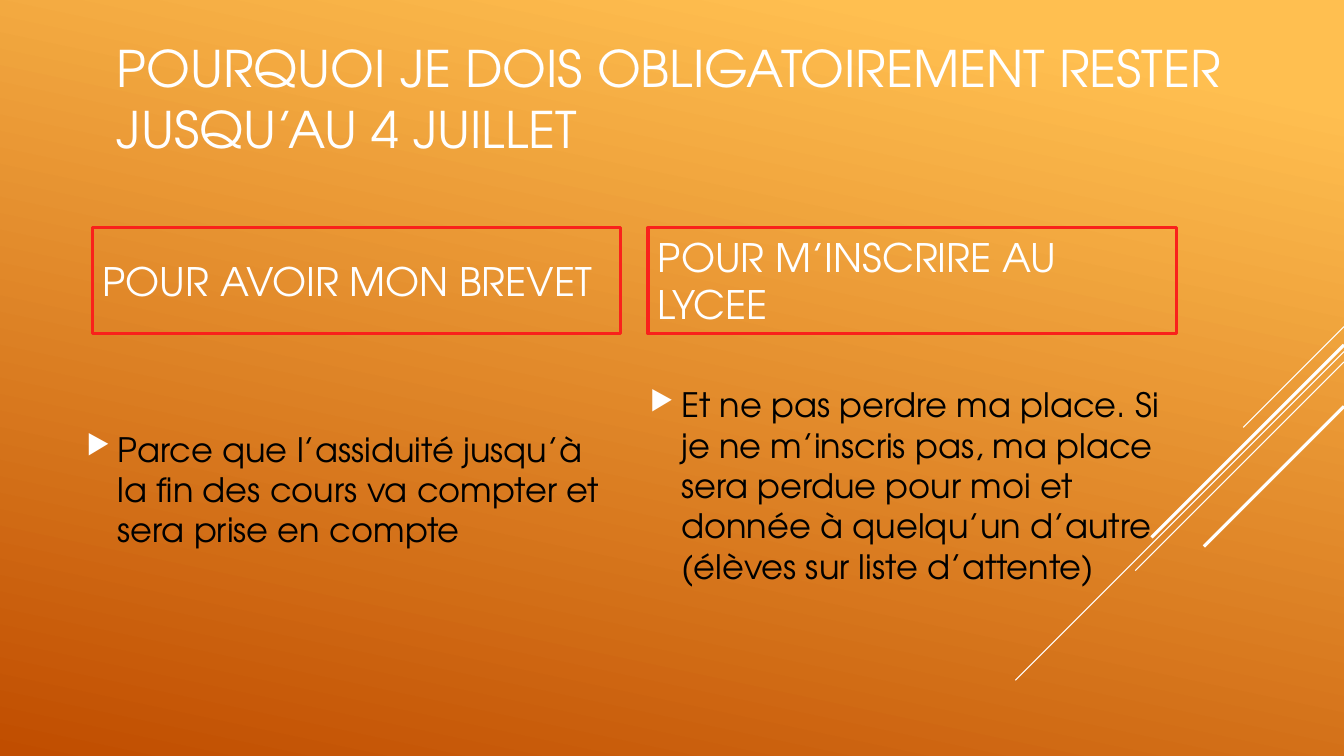
from lxml import etree
from pptx import Presentation
from pptx.dml.color import RGBColor
from pptx.enum.shapes import MSO_CONNECTOR, MSO_SHAPE
from pptx.enum.text import MSO_ANCHOR, MSO_AUTO_SIZE, PP_ALIGN
from pptx.oxml.ns import qn
from pptx.util import Cm, Pt

STRAIGHT = MSO_CONNECTOR.STRAIGHT
RECT = MSO_SHAPE.RECTANGLE
MIDDLE = MSO_ANCHOR.MIDDLE
NO_FIT = MSO_AUTO_SIZE.NONE
LEFT = PP_ALIGN.LEFT

WIDTH, HEIGHT = 33.87, 19.05
FONT = "TeX Gyre Adventor"
COLORS = {"light": "FFBF50", "dark": "C04D00", "white": "FFFFFF",
          "black": "000000", "red": "F9211B"}

TITLE = "POURQUOI JE DOIS OBLIGATOIREMENT RESTER JUSQU’AU 4 JUILLET"
RAYS = [(8.23, 2.54, 0.75), (8.86, 8.28, 0.75), (9.12, 5.26, 0.75),
        (8.69, 4.85, 2.25), (10.24, 3.53, 2.25)]
HEADS = [(2.34, "POUR AVOIR MON BREVET"),
         (16.33, "POUR M’INSCRIRE AU LYCEE")]
BODIES = [
    ((1.93, 7.8, 13.72, 9.04),
     "Parce que l’assiduité jusqu’à la fin des cours va compter "
     "et sera prise en compte"),
    ((16.13, 8.81, 13.72, 6.83),
     "Et ne pas perdre ma place. Si je ne m’inscris pas, ma place sera "
     "perdue pour moi et donnée à quelqu’un d’autre "
     "(élèves sur liste d’attente)"),
]


class Deck:
    """Hold the style and the current slide, and draw each kind of element."""

    def __init__(self):
        self.file = Presentation()
        self.file.slide_width, self.file.slide_height = Cm(WIDTH), Cm(HEIGHT)
        self.slide = self.file.slides.add_slide(self.file.slide_layouts[5])
        self.shapes = self.slide.shapes

    def color(self, name):
        return RGBColor.from_string(COLORS[name])

    def back(self):
        fill = self.slide.background.fill
        fill.gradient()
        fill.gradient_angle = 258
        stops = zip(fill.gradient_stops, [(0.1, "light"), (1, "dark")])
        for stop, (place, name) in stops:
            stop.position = place
            stop.color.rgb = self.color(name)

    def label(self, shape, text, size, name):
        frame = shape.text_frame
        frame.text = text
        frame.word_wrap = True
        frame.auto_size = NO_FIT
        frame.vertical_anchor = MIDDLE
        para = frame.paragraphs[0]
        para.alignment = LEFT
        para.font.name = FONT
        para.font.size = Pt(size)
        para.font.color.rgb = self.color(name)
        return para

    def title(self, text, box):
        shape = self.shapes.title
        shape.left, shape.top, shape.width, shape.height = map(Cm, box)
        self.label(shape, text, 36, "white")

    def ray(self, top, span, weight):
        line = self.shapes.add_connector(
            STRAIGHT, Cm(WIDTH), Cm(top), Cm(WIDTH - span), Cm(top + span))
        line.line.color.rgb = self.color("white")
        line.line.width = Pt(weight)
        etree.SubElement(line._element.spPr, qn("a:effectLst"))

    def head(self, text, box):
        shape = self.shapes.add_shape(RECT, *map(Cm, box))
        shape.shadow.inherit = False
        shape.fill.background()
        shape.line.color.rgb = self.color("red")
        shape.line.width = Pt(2.25)
        self.label(shape, text, 28, "white")

    def body(self, text, box):
        shape = self.shapes.add_textbox(*map(Cm, box))
        para = self.label(shape, text, 24, "black")
        para.space_before, para.space_after = Pt(4.8), Pt(6)
        self.bullet(para)

    def bullet(self, para):
        props = para._p.get_or_add_pPr()
        props.set("marL", str(Cm(0.79)))
        props.set("indent", str(Cm(-0.79)))
        tint = etree.Element(qn("a:buClr"))
        etree.SubElement(tint, qn("a:srgbClr"), val=COLORS["white"])
        size = etree.Element(qn("a:buSzPct"), val="80000")
        mark = etree.Element(qn("a:buChar"), char="▶")
        font = props.find(qn("a:defRPr"))
        for item in (tint, size, mark):
            font.addprevious(item)


def main():
    deck = Deck()
    deck.back()
    for ray in RAYS:
        deck.ray(*ray)
    deck.title(TITLE, (2.69, 0.53, 29.18, 3.86))
    for box, text in BODIES:
        deck.body(text, box)
    for left, text in HEADS:
        deck.head(text, (left, 5.74, 13.31, 2.67))
    deck.file.save("out.pptx")


if __name__ == "__main__":
    main()
